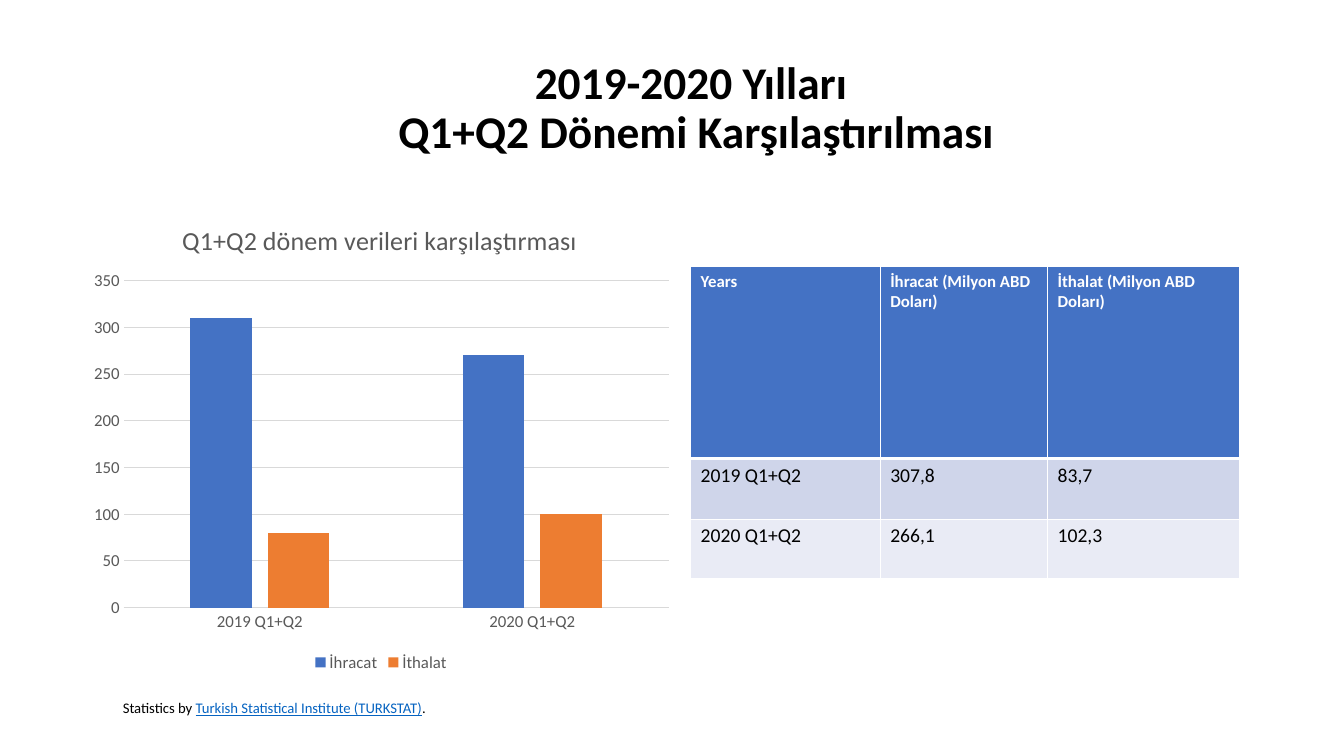
import pptx
import pptx.util
import pptx.chart.data
import pptx.dml.color
import pptx.enum.chart
import pptx.enum.text
import pptx.oxml
import pptx.oxml.ns

Inches, Pt = pptx.util.Inches, pptx.util.Pt
RGBColor = pptx.dml.color.RGBColor

BLACK = RGBColor(0x00, 0x00, 0x00)
WHITE = RGBColor(0xFF, 0xFF, 0xFF)
GREY = RGBColor(0x59, 0x59, 0x59)
RULE = RGBColor(0xD9, 0xD9, 0xD9)
BLUE = RGBColor(0x44, 0x72, 0xC4)
ORANGE = RGBColor(0xED, 0x7D, 0x31)
LINK = RGBColor(0x05, 0x63, 0xC1)
BANDS = [RGBColor(0xCF, 0xD5, 0xEA), RGBColor(0xE9, 0xEB, 0xF5)]

HEADING = "2019-2020 Yılları \vQ1+Q2 Dönemi Karşılaştırılması"
CHART_HEADING = "Q1+Q2 dönem verileri karşılaştırması"
PERIODS = ["2019 Q1+Q2", "2020 Q1+Q2"]
TRADE = [("İhracat", [310, 270], BLUE), ("İthalat", [80, 100], ORANGE)]
TABLE_ROWS = [
    ["Years", "İhracat (Milyon ABD Doları)", "İthalat (Milyon ABD Doları)"],
    [PERIODS[0], "307,8", "83,7"],
    [PERIODS[1], "266,1", "102,3"],
]
CREDIT = [("Statistics by ", BLACK, None),
          ("Turkish Statistical Institute (TURKSTAT)", LINK, True),
          (".", BLACK, None)]
COLUMN_WIDTHS = [1.88, 1.66, 1.9]
ROW_HEIGHTS = [1.91, 0.6, 0.59]


def style(font, size, color, bold=False, underline=None):
    """Apply the typeface and format to a font."""
    font.name, font.size, font.bold = "Calibri", Pt(size), bold
    font.underline = underline
    font.color.rgb = color


def write(paragraph, text, **format):
    """Add text to a paragraph in the given format."""
    for index, line in enumerate(text.split("\v")):
        if index:
            paragraph.add_line_break()
        run = paragraph.add_run()
        run.text = line
        style(run.font, **format)


def border(cell, side, width):
    """Draw one white side of a table cell."""
    cell._tc.get_or_add_tcPr().append(pptx.oxml.parse_xml(
        f'<a:ln{side} {pptx.oxml.ns.nsdecls("a")} w="{Pt(width)}"><a:solidFill>'
        f'<a:srgbClr val="{WHITE}"/></a:solidFill></a:ln{side}>'))


def place(parent, before, target=None, **fractions):
    """Give a chart part a manual layout in fractions of the chart."""
    inner = f'<c:layoutTarget val="{target}"/>' if target else ""
    inner += "".join(f'<c:{key}Mode val="edge"/>' for key in "xy")
    inner += "".join(f'<c:{key} val="{value}"/>' for key, value in fractions.items())
    for layout in parent.findall(pptx.oxml.ns.qn("c:layout")):
        parent.remove(layout)
    parent.insert(before, pptx.oxml.parse_xml(
        f'<c:layout {pptx.oxml.ns.nsdecls("c")}><c:manualLayout>{inner}'
        '</c:manualLayout></c:layout>'))


def add_heading(slide):
    """Fill the title placeholder."""
    title = slide.shapes.title
    title.left, title.top = Inches(1.51), Inches(0.57)
    title.width, title.height = Inches(10.79), Inches(1.03)
    frame = title.text_frame
    frame.auto_size = pptx.enum.text.MSO_AUTO_SIZE.NONE
    frame.vertical_anchor = pptx.enum.text.MSO_ANCHOR.MIDDLE
    paragraph = frame.paragraphs[0]
    paragraph.alignment = pptx.enum.text.PP_ALIGN.CENTER
    paragraph.line_spacing = 0.9
    write(paragraph, HEADING, size=32.4, color=BLACK, bold=True)


def add_trade_table(slide):
    """Add the table of exports and imports."""
    table = slide.shapes.add_table(
        len(TABLE_ROWS), len(COLUMN_WIDTHS), Inches(6.85), Inches(2.64),
        Inches(sum(COLUMN_WIDTHS)), Inches(sum(ROW_HEIGHTS))).table
    for column, width in zip(table.columns, COLUMN_WIDTHS):
        column.width = Inches(width)
    for r, texts in enumerate(TABLE_ROWS):
        table.rows[r].height = Inches(ROW_HEIGHTS[r])
        header = r == 0
        for c, text in enumerate(texts):
            cell = table.cell(r, c)
            for side in "LRTB":
                border(cell, side, 3 if (r, side) in [(0, "B"), (1, "T")] else 1)
            cell.fill.solid()
            cell.fill.fore_color.rgb = BLUE if header else BANDS[r - 1]
            write(cell.text_frame.paragraphs[0], text, size=12 if header else 14,
                  color=WHITE if header else BLACK, bold=header)


def add_trade_chart(slide):
    """Add the clustered column chart."""
    data = pptx.chart.data.CategoryChartData()
    data.categories = PERIODS
    for name, values, _ in TRADE:
        data.add_series(name, values)
    chart = slide.shapes.add_chart(
        pptx.enum.chart.XL_CHART_TYPE.COLUMN_CLUSTERED,
        Inches(0.81), Inches(2.02), Inches(5.94), Inches(4.69), data).chart
    style(chart.font, size=12, color=GREY)

    chart.has_title = True
    write(chart.chart_title.text_frame.paragraphs[0], CHART_HEADING, size=18.6, color=GREY)
    chart.chart_title.include_in_layout = False
    place(chart.chart_title._element, 1, x=0.16, y=0.03)
    place(chart._chartSpace.chart.plotArea, 0, "inner", x=0.07, y=0.163, w=0.91, h=0.692)

    chart.has_legend = True
    chart.legend.position = pptx.enum.chart.XL_LEGEND_POSITION.BOTTOM
    chart.legend.include_in_layout = False
    style(chart.legend.font, size=12, color=GREY)

    plot = chart.plots[0]
    plot.gap_width, plot.overlap, plot.vary_by_categories = 219, -27, False
    for series, (_, _, color) in zip(plot.series, TRADE):
        series.format.fill.solid()
        series.format.fill.fore_color.rgb = color

    for axis in (chart.category_axis, chart.value_axis):
        axis.major_tick_mark = pptx.enum.chart.XL_TICK_MARK.NONE
        axis.minor_tick_mark = pptx.enum.chart.XL_TICK_MARK.NONE
        style(axis.tick_labels.font, size=12, color=GREY)
    scale = chart.value_axis
    scale.minimum_scale, scale.maximum_scale, scale.major_unit = 0, 350, 50
    scale.tick_labels.number_format = "General"
    scale.tick_labels.number_format_is_linked = False
    scale.format.line.fill.background()
    for line in (chart.category_axis.format.line, scale.major_gridlines.format.line):
        line.color.rgb = RULE
        line.width = Pt(0.75)


def add_credit(slide):
    """Add the source line below the chart."""
    frame = slide.shapes.add_textbox(
        Inches(1.12), Inches(6.71), Inches(8.8), Inches(0.63)).text_frame
    frame.word_wrap = True
    frame.vertical_anchor = pptx.enum.text.MSO_ANCHOR.MIDDLE
    for text, color, underline in CREDIT:
        write(frame.paragraphs[0], text, size=10.5, color=color, underline=underline)


def main():
    """Build and save the slide."""
    deck = pptx.Presentation()
    deck.slide_width, deck.slide_height = Inches(13.33), Inches(7.5)
    slide = deck.slides.add_slide(deck.slide_layouts[5])
    add_heading(slide)
    add_trade_table(slide)
    add_credit(slide)
    add_trade_chart(slide)
    deck.save("out.pptx")


if __name__ == "__main__":
    main()
